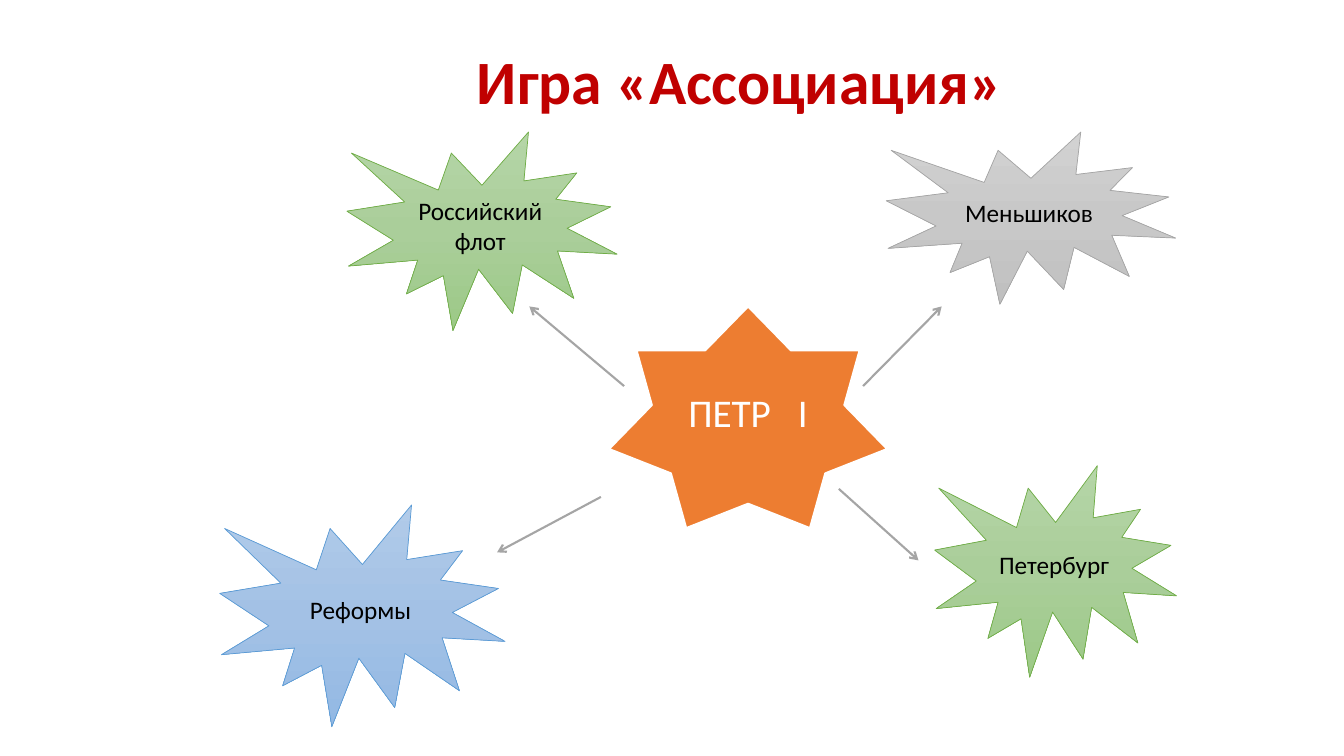
"""Builds the association game slide about Peter I."""
from copy import deepcopy
from dataclasses import dataclass

from pptx import Presentation
from pptx.dml.color import RGBColor
from pptx.enum.shapes import MSO_CONNECTOR as Connector, MSO_SHAPE as Shape
from pptx.enum.text import MSO_ANCHOR as Anchor, PP_ALIGN as Align
from pptx.oxml.ns import qn
from pptx.oxml.xmlchemy import OxmlElement
from pptx.util import Inches, Pt


@dataclass(frozen=True)
class Theme:
    """Colours and type sizes of the slide."""
    font: str = "Calibri"
    title_size: int = 44
    hero_size: int = 28
    idea_size: int = 18
    title: str = "C00000"
    hero: str = "ED7D31"
    light: str = "FFFFFF"
    dark: str = "000000"
    arrow: str = "A5A5A5"
    green: tuple = ("70AD47", "B5D5A7", "AACE9A", "9CC987")
    gray: tuple = ("A5A5A5", "D2D2D2", "C8C8C8", "C0C0C0")
    blue: tuple = ("5B9BD5", "B1CBE9", "A3C1E5", "93B9E4")


class AssociationSlide:
    """Draws the elements of the slide in one style."""

    def __init__(self, slide, theme):
        """Keep the slide and its style."""
        self.shapes = slide.shapes
        self.theme = theme

    def label(self, frame, words, size, color, bold=False, gap=0):
        """Set centred words, widening the first space by gap points."""
        frame.word_wrap = True
        frame.vertical_anchor = Anchor.MIDDLE
        line = frame.paragraphs[0]
        line.alignment = Align.CENTER
        for part in words.partition(" ") if gap else [words]:
            run = line.add_run()
            run.text = part
            if part == " ":
                run._r.get_or_add_rPr().set("spc", str(gap * 100))
        line.font.name = self.theme.font
        line.font.size = Pt(size)
        line.font.bold = bold
        line.font.color.rgb = RGBColor.from_string(color)
        return line

    def title(self, words, box):
        """Add the slide heading."""
        heading = self.shapes.add_textbox(*map(Inches, box))
        line = self.label(heading.text_frame, words, self.theme.title_size,
                          self.theme.title, bold=True)
        line.line_spacing = 0.9

    def outline(self, kind, box, color, width):
        """Add a preset shape with a plain border."""
        figure = self.shapes.add_shape(kind, *map(Inches, box))
        figure.shadow.inherit = False
        figure.line.color.rgb = RGBColor.from_string(color)
        figure.line.width = Pt(width)
        return figure

    def hero(self, words, box):
        """Add the central star."""
        star = self.outline(Shape.STAR_7_POINT, box, self.theme.light, 1.5)
        star.fill.solid()
        star.fill.fore_color.rgb = RGBColor.from_string(self.theme.hero)
        self.label(star.text_frame, words, self.theme.hero_size,
                   self.theme.light, gap=13)

    def idea(self, words, box, palette):
        """Add an association burst with a vertical gradient."""
        border, *shades = palette
        burst = self.outline(Shape.EXPLOSION1, box, border, 0.5)
        burst.fill.gradient()
        burst.fill.gradient_angle = 270
        stops = burst._element.spPr.find(qn("a:gradFill")).find(qn("a:gsLst"))
        stops.insert(1, deepcopy(stops[0]))
        for stop, shade, position in zip(burst.fill.gradient_stops, shades, (0, 0.5, 1)):
            stop.color.rgb = RGBColor.from_string(shade)
            stop.position = position
        self.label(burst.text_frame, words, self.theme.idea_size, self.theme.dark)

    def arrow(self, start, end):
        """Add an open-headed arrow."""
        link = self.shapes.add_connector(Connector.STRAIGHT,
                                         *map(Inches, (*start, *end)))
        link.line.color.rgb = RGBColor.from_string(self.theme.arrow)
        link.line.width = Pt(1.5)
        head = OxmlElement("a:tailEnd")
        head.set("type", "arrow")
        properties = link._element.spPr
        properties.find(qn("a:ln")).append(head)
        properties.append(OxmlElement("a:effectLst"))


def main():
    """Build and save the presentation."""
    deck = Presentation()
    deck.slide_width, deck.slide_height = Inches(13.33), Inches(7.5)
    theme = Theme()
    game = AssociationSlide(deck.slides.add_slide(deck.slide_layouts[6]), theme)

    game.title("Игра «Ассоциация»", (3.24, 0.21, 8.2, 1.26))
    game.hero("ПЕТР І", (6.04, 3.04, 2.76, 2.2))

    for start, end in (
        ((8.56, 3.83), (9.34, 3.04)),
        ((5.96, 4.93), (4.93, 5.48)),
        ((8.32, 4.85), (9.11, 5.56)),
        ((6.19, 3.83), (5.25, 3.04)),
    ):
        game.arrow(start, end)

    for words, box, palette in (
        ("Меньшиков", (8.79, 1.31, 2.87, 1.71), theme.gray),
        ("Петербург", (9.27, 4.62, 2.4, 2.1), theme.green),
        ("Реформы", (2.18, 5.01, 2.83, 2.2), theme.blue),
        ("Российский флот", (3.44, 1.31, 2.68, 1.97), theme.green),
    ):
        game.idea(words, box, palette)

    deck.save("out.pptx")


if __name__ == "__main__":
    main()
